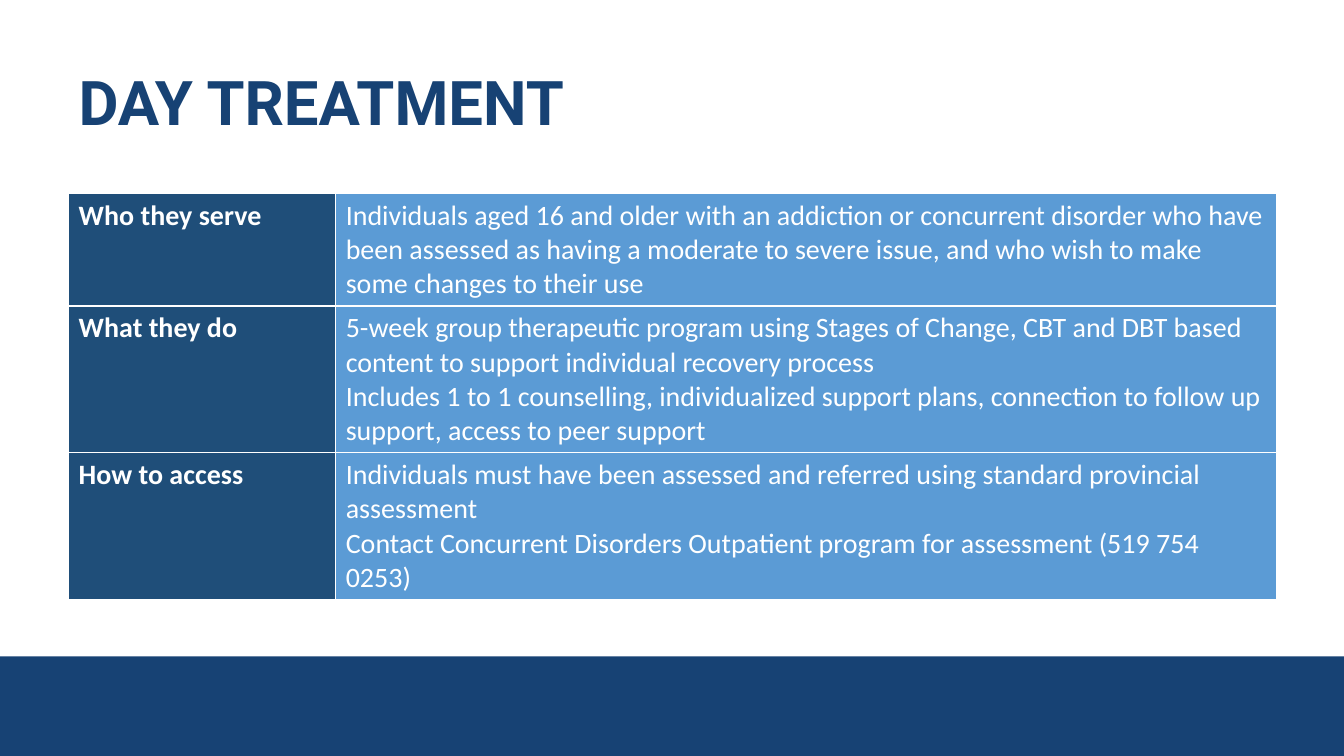
from lxml.etree import SubElement
from pptx import Presentation
from pptx.dml.color import RGBColor
from pptx.enum.shapes import MSO_SHAPE as SHAPE
from pptx.enum.text import MSO_ANCHOR as ANCHOR
from pptx.oxml.ns import qn
from pptx.util import Cm, Pt

NAVY, DARK_BLUE, BLUE, WHITE = "174274", "1F4E79", "5B9BD5", "FFFFFF"
TITLE_FORMAT = {"name": "Roboto", "size": Pt(44), "bold": True}
LABEL_FORMAT = {"name": "Calibri", "size": Pt(20), "bold": True}
DETAIL_FORMAT = {**LABEL_FORMAT, "bold": False}

LEFT, WIDTH = 1.73, 30.43
COLUMN_WIDTHS = (6.73, 23.7)
ROW_HEIGHTS = (2.83, 3.7, 3.7)
PROGRAM = [
    ("Who they serve", [
        "Individuals aged 16 and older with an addiction or concurrent disorder who have "
        "been assessed as having a moderate to severe issue, and who wish to make some "
        "changes to their use"]),
    ("What they do", [
        "5-week group therapeutic program using Stages of Change, CBT and DBT based "
        "content to support individual recovery process",
        "Includes 1 to 1 counselling, individualized support plans, connection to "
        "follow up support, access to peer support"]),
    ("How to access", [
        "Individuals must have been assessed and referred using standard provincial "
        "assessment",
        "Contact Concurrent Disorders Outpatient program for assessment (519 754 0253)"]),
]


def rgb(color):
    return RGBColor.from_string(color)


def paint(fill, color):
    fill.solid()
    fill.fore_color.rgb = rgb(color)


def write(tf, lines, color, formats):
    """Put one paragraph per line into the text frame."""
    for i, line in enumerate(lines):
        p = tf.add_paragraph() if i else tf.paragraphs[0]
        r = p.add_run()
        r.text = line
        r.font.color.rgb = rgb(color)
        for name, value in formats.items():
            setattr(r.font, name, value)


def add_band(s, left, top, width, height, color):
    sp = s.shapes.add_shape(SHAPE.RECTANGLE, Cm(left), Cm(top), Cm(width), Cm(height))
    sp.shadow.inherit = False
    sp.line.fill.background()
    paint(sp.fill, color)


def add_title(s, text):
    tf = s.shapes.add_textbox(Cm(LEFT), Cm(1.02), Cm(WIDTH), Cm(3.28)).text_frame
    tf.word_wrap = True
    tf.vertical_anchor = ANCHOR.MIDDLE
    write(tf, [text], NAVY, TITLE_FORMAT)
    tf.paragraphs[0].line_spacing = 0.9


def add_borders(cell, color, width):
    tc_pr = cell._tc.get_or_add_tcPr()
    for side in ("lnL", "lnR", "lnT", "lnB"):
        ln = SubElement(tc_pr, qn(f"a:{side}"), w=str(Pt(width)))
        fill = SubElement(ln, qn("a:solidFill"))
        SubElement(fill, qn("a:srgbClr"), val=color)


def fill_cell(cell, lines, color, formats):
    add_borders(cell, WHITE, 1)
    paint(cell.fill, color)
    write(cell.text_frame, lines, WHITE, formats)


def add_program_table(s, top):
    table = s.shapes.add_table(len(PROGRAM), len(COLUMN_WIDTHS), Cm(LEFT), Cm(top),
                               Cm(WIDTH), Cm(sum(ROW_HEIGHTS))).table
    for column, width in zip(table.columns, COLUMN_WIDTHS):
        column.width = Cm(width)
    for row, height, (label, details) in zip(table.rows, ROW_HEIGHTS, PROGRAM):
        row.height = Cm(height)
        fill_cell(row.cells[0], [label], DARK_BLUE, LABEL_FORMAT)
        fill_cell(row.cells[1], details, BLUE, DETAIL_FORMAT)


def main():
    prs = Presentation()
    prs.slide_width, prs.slide_height = Cm(33.87), Cm(19.05)
    s = prs.slides.add_slide(prs.slide_layouts[6])
    add_band(s, 0, 16.54, 33.87, 2.51, NAVY)
    add_title(s, "DAY TREATMENT")
    add_program_table(s, 4.88)
    prs.save("out.pptx")


if __name__ == "__main__":
    main()
